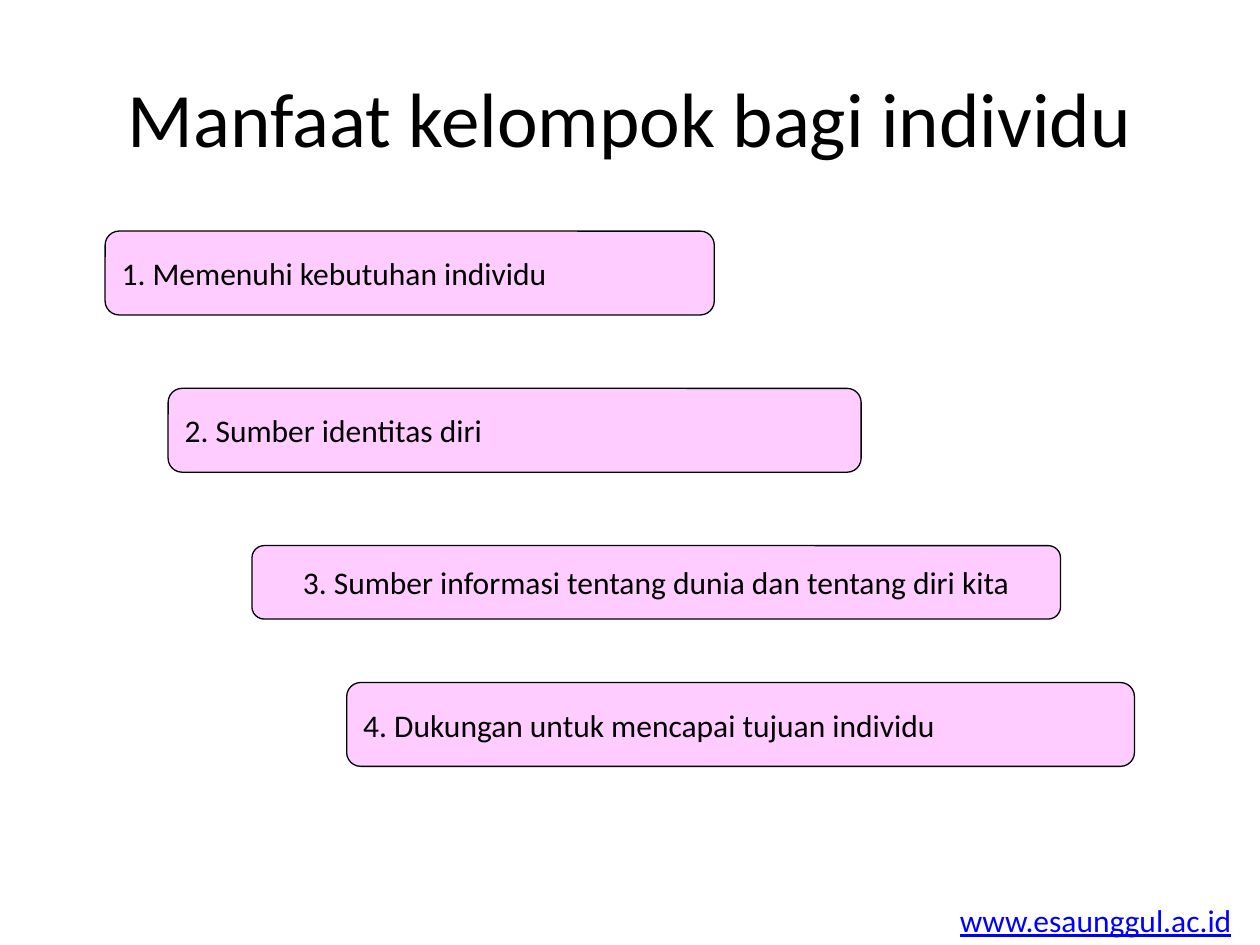
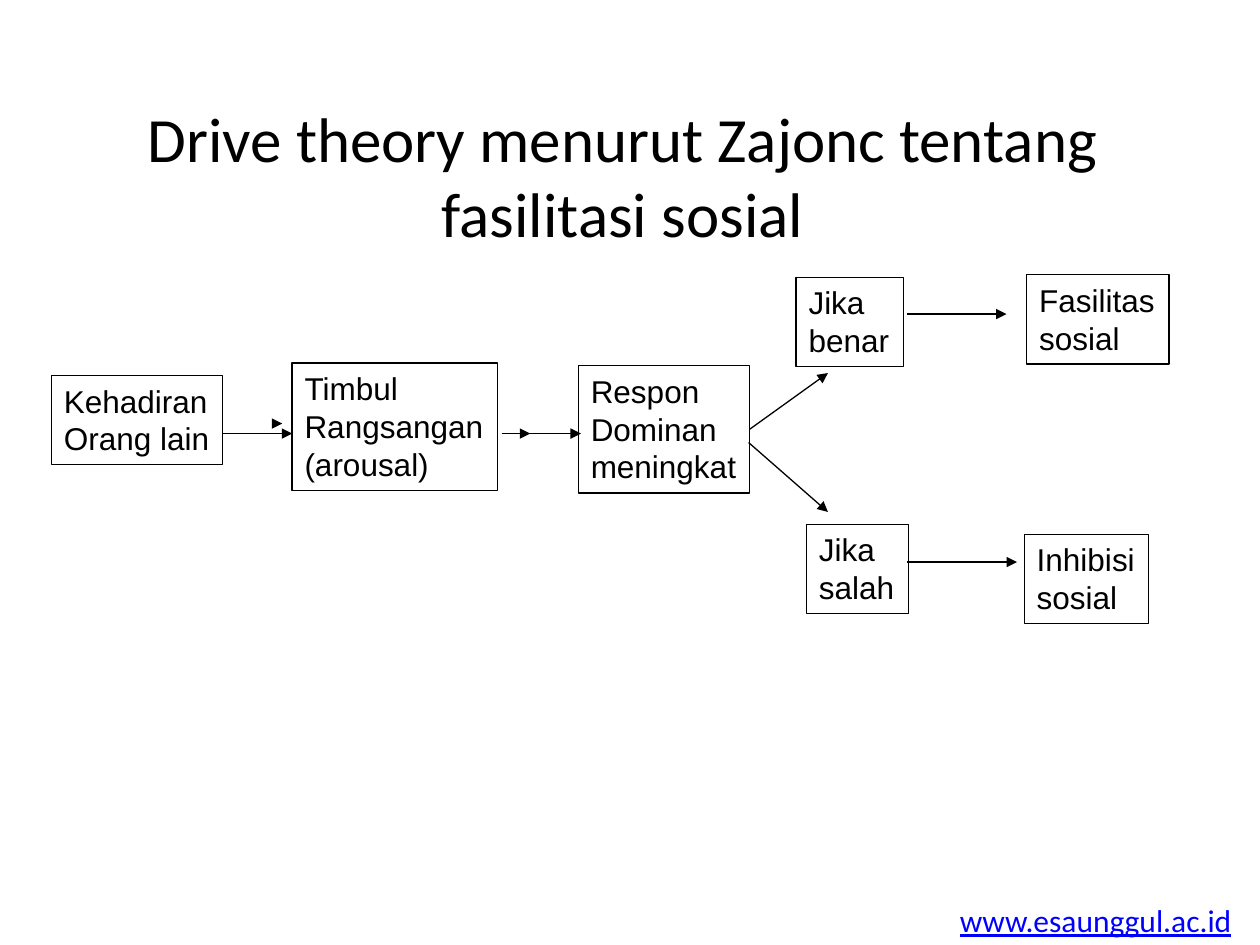
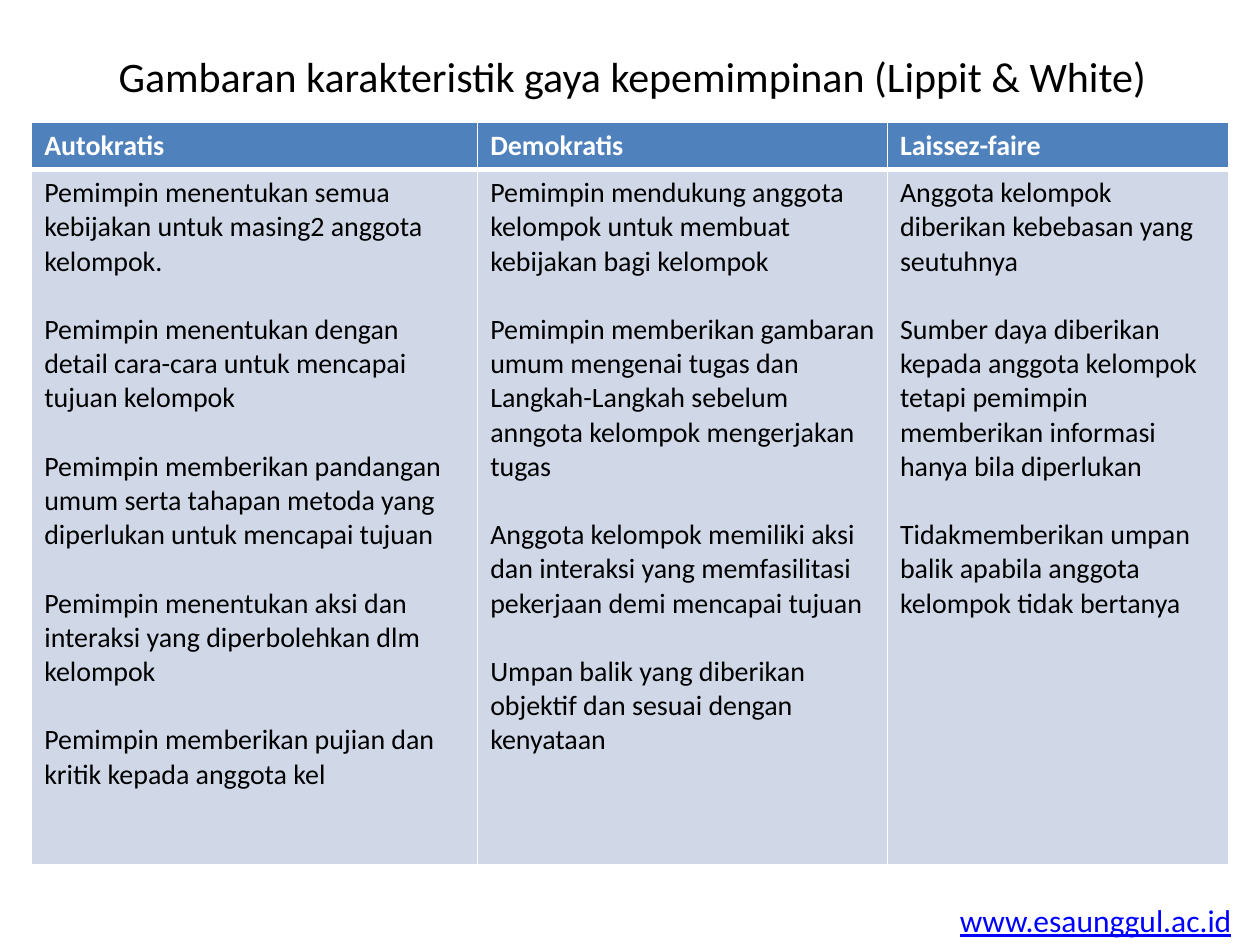
"""Build three slides on groups, social facilitation and leadership styles."""
import lxml.etree
import pptx
import pptx.dml.color
import pptx.enum.shapes
import pptx.enum.text
import pptx.oxml.ns
import pptx.util

Cm = pptx.util.Cm
Pt = pptx.util.Pt
RGBColor = pptx.dml.color.RGBColor
SHAPE = pptx.enum.shapes.MSO_SHAPE
ALIGN = pptx.enum.text.PP_ALIGN
ANCHOR = pptx.enum.text.MSO_ANCHOR
AUTO_SIZE = pptx.enum.text.MSO_AUTO_SIZE
qn = pptx.oxml.ns.qn

BLACK = RGBColor(0x00, 0x00, 0x00)
WHITE = RGBColor(0xFF, 0xFF, 0xFF)
LINK_BLUE = RGBColor(0x00, 0x00, 0xFF)
PINK = RGBColor(0xFF, 0xCC, 0xFF)
HEADER_BLUE = RGBColor(0x4F, 0x81, 0xBD)
BODY_BLUE = RGBColor(0xD0, 0xD8, 0xE8)

LABEL = {"name": "Calibri", "size": Pt(18)}
NODE = {"name": "Arial", "size": Pt(18)}
HEADER = {"name": "Calibri", "size": Pt(16), "bold": True}
BODY = {"name": "Calibri", "size": Pt(16), "bold": False}
THIN = Pt(0.75)

BENEFITS = [
    ("1. Memenuhi kebutuhan individu", (0, 0, 12.28, 1.69), ALIGN.LEFT),
    ("2. Sumber identitas diri", (1.27, 3.17, 13.97, 1.69), ALIGN.LEFT),
    ("3. Sumber informasi tentang dunia dan tentang diri kita",
     (2.96, 6.34, 16.3, 1.48), ALIGN.CENTER),
    ("4. Dukungan untuk mencapai tujuan individu",
     (4.87, 9.1, 15.88, 1.69), ALIGN.LEFT),
]

NODES = {
    "presence": (["Kehadiran", "Orang lain"], (0, 2.03, 3.45, 1.8)),
    "arousal": (["Timbul", "Rangsangan", "(arousal)"], (4.85, 1.78, 4.14, 2.57)),
    "response": (["Respon", "Dominan", "meningkat"], (10.62, 1.83, 3.45, 2.57)),
    "correct": (["Jika", "benar"], (15.01, 0.05, 2.16, 1.8)),
    "wrong": (["Jika", "salah"], (15.22, 5.03, 2.06, 1.8)),
    "facilitation": (["Fasilitas", "sosial"], (19.66, 0, 2.87, 1.8)),
    "inhibition": (["Inhibisi", "sosial"], (19.61, 5.23, 2.51, 1.8)),
}

ARROWS = [
    (4.45, 3, 4.65, 3),
    (3.46, 3, 3.46, 3),
    (3.46, 3.2, 4.85, 3.2),
    (9.07, 3.2, 9.65, 3.2),
    (9.07, 3.2, 10.67, 3.2),
    (17.25, 0.79, 19.25, 0.79),
    (17.25, 5.79, 19.46, 5.79),
    (14.05, 3.38, 15.65, 4.78),
]

STYLES = {
    "Autokratis": [
        "Pemimpin menentukan semua kebijakan untuk masing2 anggota kelompok.",
        "Pemimpin menentukan dengan detail cara-cara untuk mencapai tujuan kelompok",
        "Pemimpin memberikan pandangan umum serta tahapan metoda yang diperlukan "
        "untuk mencapai tujuan",
        "Pemimpin menentukan aksi dan interaksi yang diperbolehkan dlm kelompok",
        "Pemimpin memberikan pujian dan kritik kepada anggota kel",
    ],
    "Demokratis": [
        "Pemimpin mendukung anggota kelompok untuk membuat kebijakan bagi kelompok",
        "Pemimpin memberikan gambaran umum mengenai tugas dan Langkah-Langkah "
        "sebelum anngota kelompok mengerjakan tugas",
        "Anggota kelompok memiliki aksi dan interaksi yang memfasilitasi pekerjaan "
        "demi mencapai tujuan",
        "Umpan balik yang diberikan objektif dan sesuai dengan kenyataan",
    ],
    "Laissez-faire": [
        "Anggota kelompok diberikan kebebasan yang seutuhnya",
        "Sumber daya diberikan kepada anggota kelompok tetapi pemimpin memberikan "
        "informasi hanya bila diperlukan",
        "Tidakmemberikan umpan balik apabila anggota kelompok tidak bertanya",
    ],
}


def place(origin, box):
    """Return a box in centimetres, moved by the origin, as lengths."""
    left, top, width, height = box
    return Cm(origin[0] + left), Cm(origin[1] + top), Cm(width), Cm(height)


def write(frame, lines, style, color=BLACK, align=ALIGN.LEFT, gap=Pt(0)):
    """Write each line as a formatted paragraph, with a gap between them."""
    for number, line in enumerate(lines):
        para = frame.paragraphs[0] if number == 0 else frame.add_paragraph()
        para.alignment = align
        if number and gap:
            para.space_before = gap
        span = para.add_run()
        span.text = line
        for name, value in style.items():
            setattr(span.font, name, value)
        span.font.color.rgb = color


def add_page(deck, title, box, size):
    """Add a title-only page with its title placed and formatted."""
    page = deck.slides.add_slide(deck.slide_layouts[5])
    holder = page.shapes.title
    holder.left, holder.top, holder.width, holder.height = place((0, 0), box)
    frame = holder.text_frame
    frame.auto_size = AUTO_SIZE.NONE
    frame.vertical_anchor = ANCHOR.MIDDLE
    write(frame, [title], {"name": "Calibri", "size": Pt(size)}, align=ALIGN.CENTER)
    return page


def add_footer(page):
    """Put the web address on the layout that all pages share."""
    box = page.shapes.add_textbox(*place((0, 0), (19.1, 18.03, 6.05, 1.02)))
    box.text_frame.word_wrap = False
    box.text_frame.auto_size = AUTO_SIZE.SHAPE_TO_FIT_TEXT
    write(box.text_frame, ["www.esaunggul.ac.id"], LABEL | {"underline": True}, LINK_BLUE)
    page.slide_layout.shapes.element.append(box.element)


def add_box(page, kind, bounds, lines, style, align=ALIGN.LEFT):
    """Add an unfilled, thinly outlined shape with text."""
    shape = page.shapes.add_shape(kind, *bounds)
    shape.shadow.inherit = False
    shape.fill.background()
    shape.line.color.rgb = BLACK
    shape.line.width = THIN
    shape.text_frame.word_wrap = False
    write(shape.text_frame, lines, style, align=align)
    return shape


def add_arrow(page, origin, ends):
    """Add a straight arrow with its head at the second end."""
    x1, y1, x2, y2 = ends
    arrow = page.shapes.add_connector(
        pptx.enum.shapes.MSO_CONNECTOR.STRAIGHT,
        Cm(origin[0] + x1), Cm(origin[1] + y1), Cm(origin[0] + x2), Cm(origin[1] + y2))
    arrow.line.color.rgb = BLACK
    arrow.line.width = THIN
    properties = arrow.element.spPr
    line = properties.find(qn("a:ln"))
    lxml.etree.SubElement(line, qn("a:tailEnd"), type="triangle")
    lxml.etree.SubElement(properties, qn("a:effectLst"))
    return arrow


def add_staircase(page, origin):
    """Add the four benefits as descending rounded boxes."""
    for text, box, align in BENEFITS:
        shape = add_box(page, SHAPE.ROUNDED_RECTANGLE, place(origin, box), [text], LABEL, align)
        shape.fill.solid()
        shape.fill.fore_color.rgb = PINK
        shape.text_frame.vertical_anchor = ANCHOR.MIDDLE


def add_flow(page, origin):
    """Add the drive theory boxes and the arrows between them."""
    nodes = {}
    for name, (lines, box) in NODES.items():
        nodes[name] = add_box(page, SHAPE.RECTANGLE, place(origin, box), lines, NODE)
        nodes[name].text_frame.vertical_anchor = ANCHOR.TOP
        nodes[name].text_frame.auto_size = AUTO_SIZE.SHAPE_TO_FIT_TEXT
    for ends in ARROWS:
        add_arrow(page, origin, ends)
    to_correct = add_arrow(page, origin, (14.05, 3.2, 15.65, 1.98))
    to_correct.begin_connect(nodes["response"], 3)


def format_cell(cell, fill, bottom):
    """Give a cell white borders and a plain fill."""
    properties = cell._tc.get_or_add_tcPr()
    for side, width in (("L", 1), ("R", 1), ("T", 1), ("B", bottom)):
        line = lxml.etree.SubElement(properties, qn(f"a:ln{side}"), w=str(Pt(width)))
        paint = lxml.etree.SubElement(line, qn("a:solidFill"))
        lxml.etree.SubElement(paint, qn("a:srgbClr"), val=str(WHITE))
    cell.fill.solid()
    cell.fill.fore_color.rgb = fill


def add_style_table(page, bounds):
    """Add the table that compares the leadership styles."""
    table = page.shapes.add_table(2, len(STYLES), *bounds).table
    for column, width in zip(table.columns, (8.99, 8.26, 6.88)):
        column.width = Cm(width)
    for row, height in zip(table.rows, (0.95, 14.02)):
        row.height = Cm(height)
    for number, (name, traits) in enumerate(STYLES.items()):
        header, body = table.cell(0, number), table.cell(1, number)
        format_cell(header, HEADER_BLUE, 3)
        write(header.text_frame, [name], HEADER, WHITE)
        format_cell(body, BODY_BLUE, 1)
        write(body.text_frame, traits, BODY, gap=Pt(19.5))


def main():
    """Build and save the deck."""
    deck = pptx.Presentation()
    deck.slide_width, deck.slide_height = Cm(25.4), Cm(19.05)

    benefits = add_page(deck, "Manfaat kelompok bagi individu", (1.27, 0.76, 22.86, 3.18), 44)
    add_footer(benefits)
    add_staircase(benefits, (2.12, 4.66))

    theory = add_page(deck, "Drive theory menurut Zajonc tentang fasilitasi sosial",
                      (1.12, 1.93, 22.86, 3.18), 36)
    add_flow(theory, (1.04, 5.54))

    leadership = add_page(deck, "Gambaran karakteristik gaya kepemimpinan (Lippit & White)",
                          (1.32, 0.64, 22.86, 1.78), 24)
    add_style_table(leadership, place((0, 0), (0.64, 2.47, 24.13, 14.97)))

    deck.save("out.pptx")


if __name__ == "__main__":
    main()
